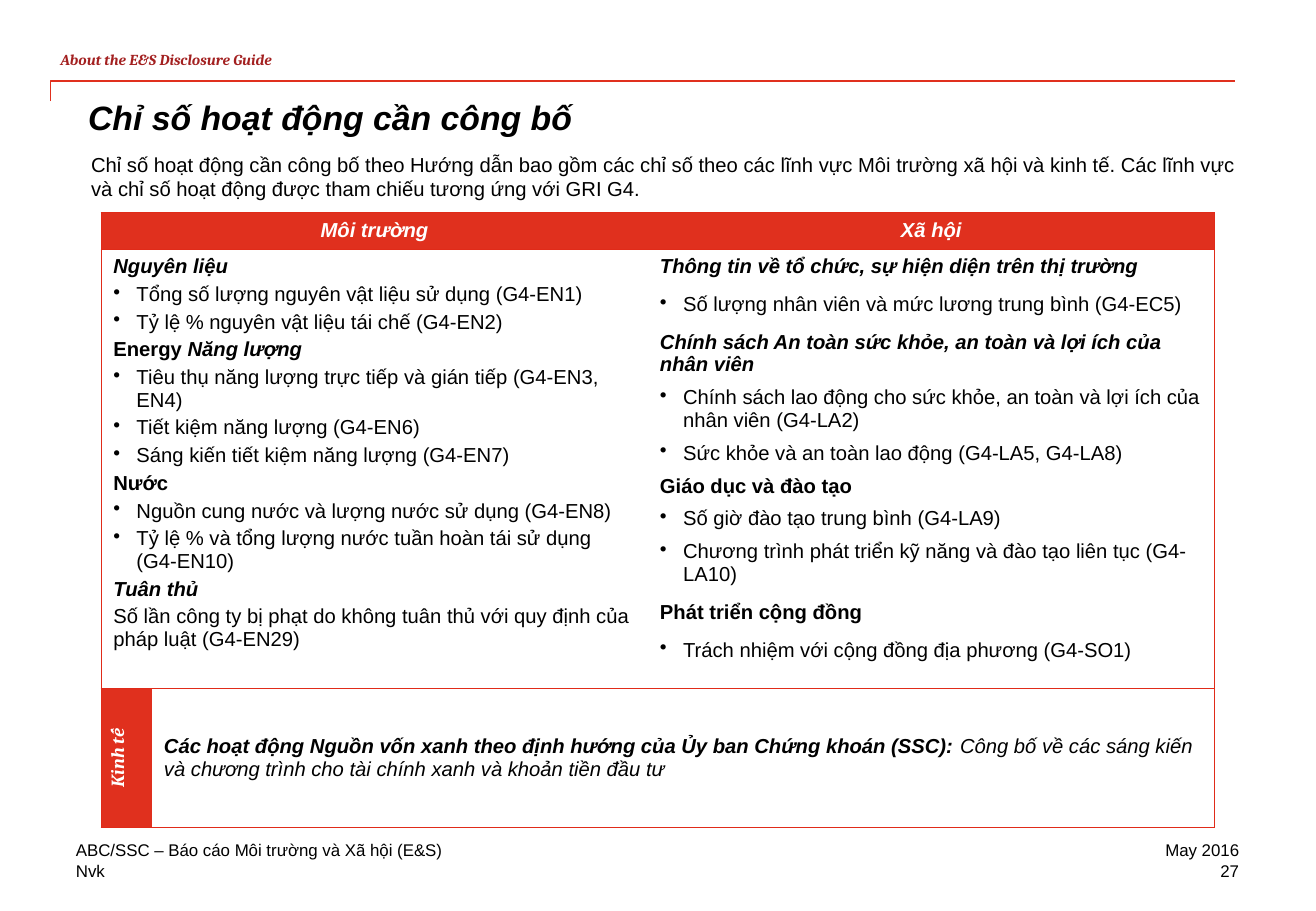
from dataclasses import dataclass

from lxml.etree import SubElement
from pptx import Presentation
from pptx.dml.color import RGBColor as Color
from pptx.enum.text import MSO_ANCHOR as Anchor, PP_ALIGN as Align
from pptx.oxml import parse_xml
from pptx.oxml.ns import nsdecls, qn
from pptx.util import Emu, Inches, Pt

UNIT = Inches(1) / 12
COLUMNS, ROWS = 130, 90
NO_STYLE = "{2D5ABB26-0587-4C30-8999-92F81FD0307C}"


@dataclass(frozen=True)
class Theme:
    red: str = "E0301E"
    border: str = "E02B19"
    running: str = "A32020"
    black: str = "000000"
    white: str = "FFFFFF"
    sans: str = "Arial"
    serif: str = "Cambria"
    title: int = 20
    text: int = 12
    side: int = 11
    small: int = 10
    header: int = 9


@dataclass(frozen=True)
class Box:
    left: float
    top: float
    width: float
    height: float

    def emu(self):
        return [grid(value) for value in (self.left, self.top, self.width, self.height)]


@dataclass(frozen=True)
class Line:
    spans: tuple
    before: int = 0
    bullet: bool = False


THEME = Theme()


def grid(value):
    return Emu(round(value * UNIT))


def head(text, before=0):
    return Line(((text, "bi"),), before)


def bold(text, before=0):
    return Line(((text, "b"),), before)


def item(text, before=0):
    return Line(((text, ""),), before, True)


ENVIRONMENT = [
    head("Nguyên liệu"),
    item("Tổng số lượng nguyên vật liệu sử dụng (G4-EN1)"),
    item("Tỷ lệ % nguyên vật liệu tái chế (G4-EN2)"),
    Line((("Energy ", "b"), ("Năng lượng", "bi"))),
    item("Tiêu thụ năng lượng trực tiếp và gián tiếp (G4-EN3, EN4)"),
    item("Tiết kiệm năng lượng (G4-EN6)"),
    item("Sáng kiến tiết kiệm năng lượng (G4-EN7)"),
    bold("Nước"),
    item("Nguồn cung nước và lượng nước sử dụng (G4-EN8)"),
    item("Tỷ lệ % và tổng lượng nước tuần hoàn tái sử dụng (G4-EN10)"),
    head("Tuân thủ"),
    Line((("Số lần công ty bị phạt do không tuân thủ với quy định của pháp luật (G4-EN29)", ""),)),
]
SOCIETY = [
    head("Thông tin về tổ chức, sự hiện diện trên thị trường", 6),
    item("Số lượng nhân viên và mức lương trung bình (G4-EC5)", 6),
    head("Chính sách An toàn sức khỏe, an toàn và lợi ích của nhân viên", 6),
    item("Chính sách lao động cho sức khỏe, an toàn và lợi ích của nhân viên (G4-LA2)", 3),
    item("Sức khỏe và an toàn lao động (G4-LA5, G4-LA8)", 3),
    bold("Giáo dục và đào tạo", 3),
    item("Số giờ đào tạo trung bình (G4-LA9)", 3),
    item("Chương trình phát triển kỹ năng và đào tạo liên tục (G4-LA10)", 3),
    bold("Phát triển cộng đồng", 6),
    item("Trách nhiệm với cộng đồng địa phương (G4-SO1)", 6),
]
ECONOMY = [Line((
    ("Các hoạt động Nguồn vốn xanh theo định hướng của Ủy ban Chứng khoán (SSC): ", "bi"),
    ("Công bố về các sáng kiến và chương trình cho tài chính xanh và khoản tiền đầu tư", "i"),
), 18)]


def style(span, size, color=THEME.black, look="", face=THEME.sans):
    font = span.font
    font.size, font.name = Pt(size), face
    font.bold, font.italic = "b" in look, "i" in look
    font.color.rgb = Color.from_string(color)


def fill_frame(frame, text, size, margins=(0, 0), align=Align.LEFT, anchor=Anchor.TOP, **looks):
    frame.word_wrap = True
    frame.margin_left = frame.margin_right = Inches(margins[0])
    frame.margin_top = frame.margin_bottom = Inches(margins[1])
    frame.vertical_anchor = anchor
    frame.text = text
    para = frame.paragraphs[0]
    para.alignment = align
    para.space_before = Pt(0)
    style(para.runs[0], size, **looks)
    return para


def add_label(page, box, text, size=THEME.small, **looks):
    label = page.shapes.add_textbox(*box.emu())
    fill_frame(label.text_frame, text, size, **looks)


def place(shape, box):
    shape.left, shape.top, shape.width, shape.height = box.emu()
    return shape.text_frame


def write_lines(cell, lines, after=3, align=Align.LEFT, size=THEME.text, **looks):
    frame = cell.text_frame
    for number, line in enumerate(lines):
        para = frame.add_paragraph() if number else frame.paragraphs[0]
        para.alignment = align
        para.space_before, para.space_after = Pt(line.before), Pt(after)
        for text, look in line.spans:
            span = para.add_run()
            span.text = text
            style(span, size, look=look, **looks)
        if line.bullet:
            props = para._p.get_or_add_pPr()
            props.set("marL", str(Inches(0.19)))
            props.set("indent", str(-Inches(0.19)))
            SubElement(props, qn("a:buChar")).set("char", "•")


def add_borders(cell, sides):
    props = cell._tc.get_or_add_tcPr()
    for place_number, side in enumerate(sides):
        props.insert(place_number, parse_xml(
            f'<a:ln{side} {nsdecls("a")} w="{Pt(0.75)}"><a:solidFill>'
            f'<a:srgbClr val="{THEME.border}"/></a:solidFill></a:ln{side}>'))


def add_header(page, box):
    add_label(page, Box(box.left + 0.6, box.top, 30, 3), "About the E&S Disclosure Guide",
              THEME.header, color=THEME.running, look="bi", face=THEME.serif)
    rule = box.top + 3
    builder = page.shapes.build_freeform(box.left, rule + 2, scale=UNIT)
    builder.add_line_segments([(box.left, rule), (box.left + box.width, rule)], close=False)
    corner = builder.convert_to_shape()
    corner.shadow.inherit = False
    corner.fill.background()
    corner.line.color.rgb = Color.from_string(THEME.red)
    corner.line.width = Pt(1)


def add_intro(page, box):
    title = place(page.shapes.title, Box(box.left, box.top, box.width, box.height))
    fill_frame(title, "Chỉ số hoạt động cần công bố", THEME.title, (0.1, 0.05), look="bi")
    body = place(page.placeholders[1], Box(box.left + 1.5, box.top + 6, box.width - 1.5, 6))
    para = fill_frame(
        body,
        "Chỉ số hoạt động cần công bố theo Hướng dẫn bao gồm các chỉ số theo các lĩnh vực "
        "Môi trường xã hội và kinh tế. Các lĩnh vực và chỉ số hoạt động được tham chiếu "
        "tương ứng với GRI G4.", THEME.text)
    para.space_after = Pt(9)
    props = para._p.get_or_add_pPr()
    props.set("marL", "0")
    props.set("indent", "0")
    SubElement(props, qn("a:buNone"))


def add_indicators(page, box):
    table = page.shapes.add_table(3, 3, *box.emu()).table
    table.first_row = table.horz_banding = False
    table._tbl.tblPr.find(qn("a:tableStyleId")).text = NO_STYLE
    for column, width in zip(table.columns, (5, 49, 56)):
        column.width = grid(width)
    for row, height in zip(table.rows, (3.5, 40.8, 13.7)):
        row.height = grid(height)
    for row, first, last in ((0, 0, 1), (1, 0, 1), (2, 1, 2)):
        table.cell(row, first).merge(table.cell(row, last))

    for column, text in ((0, "Môi trường"), (2, "Xã hội")):
        write_lines(table.cell(0, column), [head(text)], 0, Align.CENTER, color=THEME.white)
    write_lines(table.cell(1, 0), ENVIRONMENT)
    write_lines(table.cell(1, 2), SOCIETY)
    side, economy = table.cell(2, 0), table.cell(2, 1)
    write_lines(side, [head("Kinh tế", 18)], 6, Align.CENTER, THEME.side,
                color=THEME.white, face=THEME.serif)
    side._tc.get_or_add_tcPr().set("vert", "vert270")
    write_lines(economy, ECONOMY, 6)
    economy.vertical_anchor = Anchor.MIDDLE

    for row in range(3):
        for column in range(3):
            cell = table.cell(row, column)
            if row == 0 or (row, column) == (2, 0):
                cell.fill.solid()
                cell.fill.fore_color.rgb = Color.from_string(THEME.red)
            else:
                cell.fill.background()
            left = "L" if column == 0 else ""
            right = "R" if column + cell._tc.gridSpan == 3 else ""
            add_borders(cell, left + right + "TB")


def add_footer(page, box):
    right = box.left + box.width - 21.7
    for row, (name, note) in enumerate((
            ("ABC/SSC – Báo cáo Môi trường và Xã hội (E&S)", "May 2016"), ("Nvk", "27"))):
        top = box.top + row * box.height / 2
        add_label(page, Box(box.left, top, 75, 2), name)
        add_label(page, Box(right, top, 21.7, 2), note, align=Align.RIGHT)


def main():
    deck = Presentation()
    deck.slide_width, deck.slide_height = grid(COLUMNS), grid(ROWS)
    page = deck.slides.add_slide(deck.slide_layouts[1])
    add_header(page, Box(5.4, 5, 117, 5))
    add_intro(page, Box(7.5, 9, 114.9, 6))
    add_indicators(page, Box(10, 21, 110, 58))
    add_footer(page, Box(7.5, 83, 114.9, 4))
    deck.save("out.pptx")


if __name__ == "__main__":
    main()
